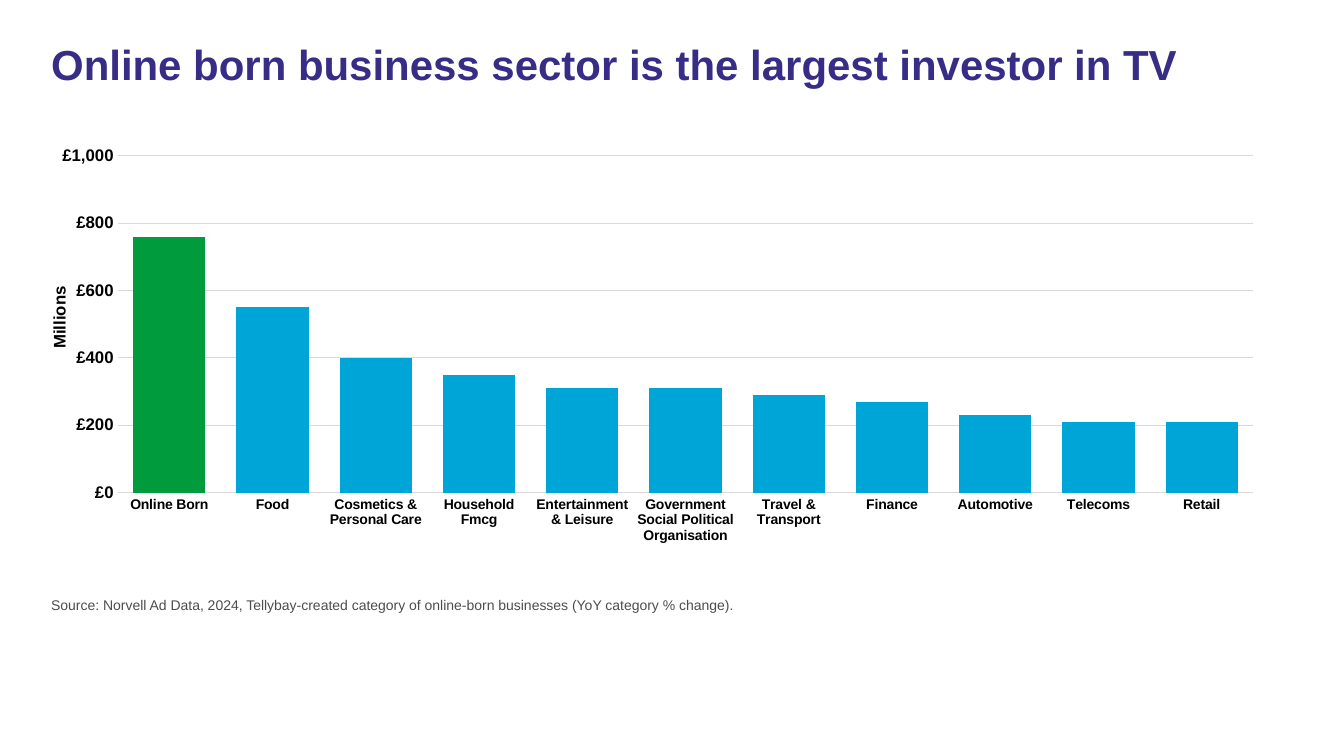
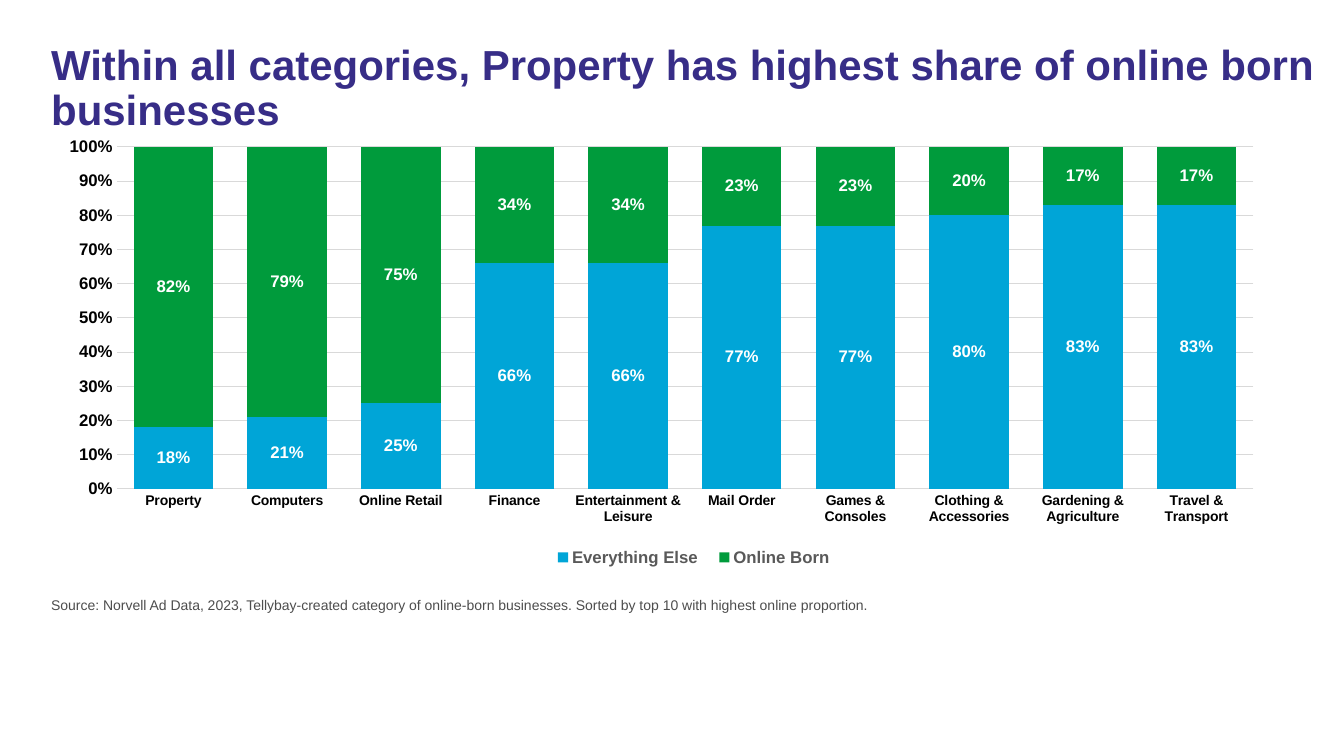
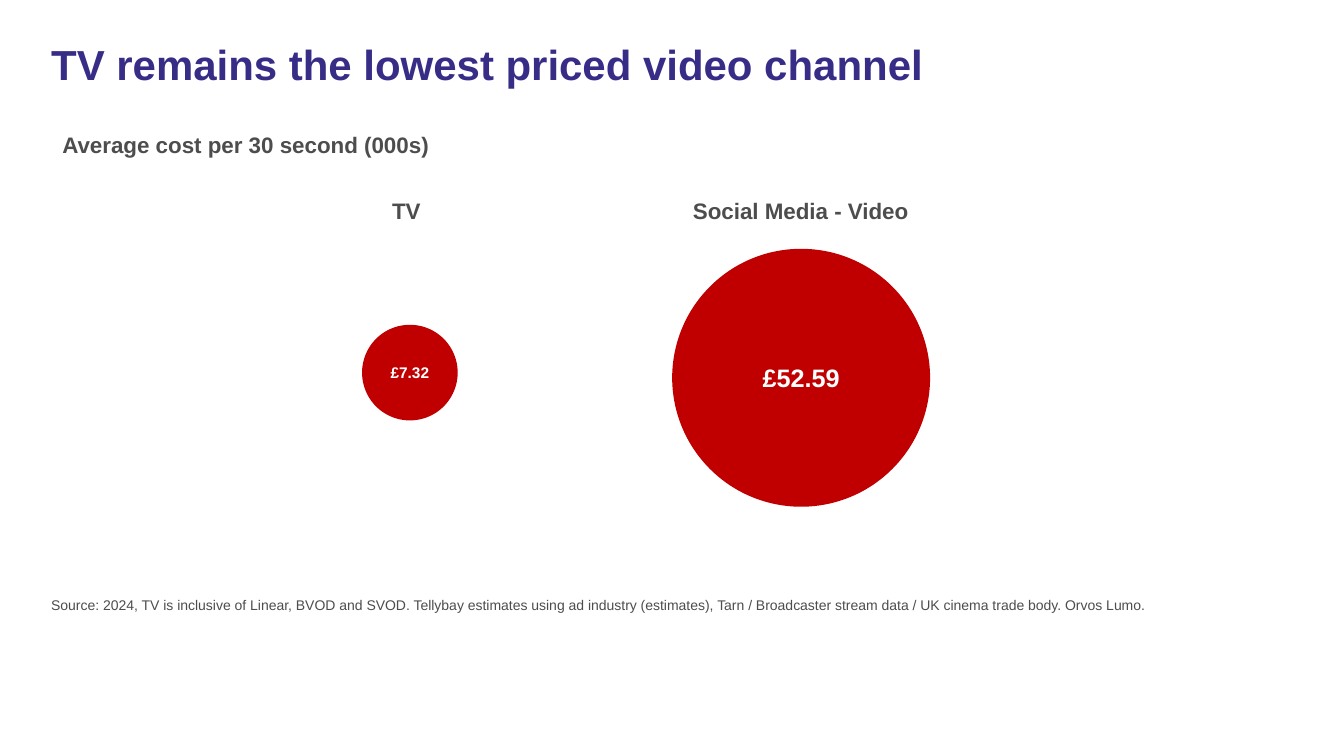
from lxml import etree
from pptx import Presentation
from pptx.chart.data import CategoryChartData
from pptx.dml.color import RGBColor
from pptx.enum.chart import XL_CHART_TYPE, XL_LABEL_POSITION, XL_LEGEND_POSITION, XL_TICK_MARK
from pptx.enum.shapes import MSO_SHAPE
from pptx.enum.text import MSO_ANCHOR, PP_ALIGN
from pptx.oxml.ns import qn
from pptx.util import Cm, Pt

FONT = "Arial"
PURPLE = RGBColor(0x37, 0x2D, 0x87)
BLUE = RGBColor(0x00, 0xA5, 0xD7)
GREEN = RGBColor(0x00, 0x9B, 0x3C)
RED = RGBColor(0xC0, 0x00, 0x00)
GREY = RGBColor(0x4D, 0x4D, 0x4D)
LEGEND_GREY = RGBColor(0x59, 0x59, 0x59)
GRID_GREY = RGBColor(0xD9, 0xD9, 0xD9)
BLACK = RGBColor(0x00, 0x00, 0x00)
WHITE = RGBColor(0xFF, 0xFF, 0xFF)

PLOT_AREA = {"x": 0.043, "y": 0.034, "w": 0.9, "h": 0.73}
LEGEND_AREA = {"x": 0.38, "y": 0.88, "w": 0.24, "h": 0.06}

INVESTORS = {
    "title": "Online born business sector is the largest investor in TV",
    "source": "Source: Norvell Ad Data, 2024, Tellybay-created category of "
              "online-born businesses (YoY category % change).",
    "unit": "Millions",
    "spend": [
        ("Online Born", 760),
        ("Food", 550),
        ("Cosmetics & Personal Care", 400),
        ("Household Fmcg", 350),
        ("Entertainment & Leisure", 310),
        ("Government Social Political Organisation", 310),
        ("Travel & Transport", 290),
        ("Finance", 270),
        ("Automotive", 230),
        ("Telecoms", 210),
        ("Retail", 210),
    ],
}
SHARES = {
    "title": "Within all categories, Property has highest share of online born businesses",
    "source": "Source: Norvell Ad Data, 2023, Tellybay-created category of "
              "online-born businesses. Sorted by top 10 with highest online proportion.",
    "online": [
        ("Property", 0.82),
        ("Computers", 0.79),
        ("Online Retail", 0.75),
        ("Finance", 0.34),
        ("Entertainment & Leisure", 0.34),
        ("Mail Order", 0.23),
        ("Games & Consoles", 0.23),
        ("Clothing & Accessories", 0.2),
        ("Gardening & Agriculture", 0.17),
        ("Travel & Transport", 0.17),
    ],
}
PRICES = {
    "title": "TV remains the lowest priced video channel",
    "source": "Source: 2024, TV is inclusive of Linear, BVOD and SVOD. Tellybay estimates "
              "using ad industry (estimates), Tarn / Broadcaster stream data / UK cinema "
              "trade body. Orvos Lumo.",
    "heading": "Average cost per 30 second (000s)",
    "channels": [
        {"name": "TV", "name_center": 10.24, "price": "£7.32", "size": 11,
         "center": (10.33, 9.39), "diameter": 2.41},
        {"name": "Social Media - Video", "name_center": 20.18, "price": "£52.59", "size": 18,
         "center": (20.19, 9.52), "diameter": 6.5},
    ],
}


def style_font(font, size, color, bold=True):
    font.name = FONT
    font.size = Pt(size)
    font.bold = bold
    font.color.rgb = color


def write(frame, text, size, color, bold=True, align=PP_ALIGN.LEFT):
    frame.word_wrap = True
    paragraph = frame.paragraphs[0]
    paragraph.alignment = align
    run = paragraph.add_run()
    run.text = text
    style_font(run.font, size, color, bold)
    return paragraph


def add_text(slide, box, *args, **kwargs):
    label = slide.shapes.add_textbox(*map(Cm, box))
    write(label.text_frame, *args, **kwargs)
    return label


def add_slide(deck, content, title_width=31.5):
    slide = deck.slides.add_slide(deck.slide_layouts[6])
    title = add_text(slide, (1.04, 0.99, title_width, 2.84), content["title"], 30, PURPLE)
    title.text_frame.paragraphs[0].line_spacing = 0.9
    add_text(slide, (1.04, 14.91, 31.5, 0.84), content["source"], 10, GREY, bold=False)
    return slide


def manual_layout(area, inner=False):
    layout = etree.Element(qn("c:layout"))
    manual = etree.SubElement(layout, qn("c:manualLayout"))
    settings = {"layoutTarget": "inner"} if inner else {}
    settings.update({"xMode": "edge", "yMode": "edge"}, **area)
    for tag, value in settings.items():
        etree.SubElement(manual, qn("c:" + tag)).set("val", str(value))
    return layout


def add_columns(slide, kind, top, height, categories, series, overlap, number_format, maximum, step):
    data = CategoryChartData()
    data.categories = categories
    for name, values, _ in series:
        data.add_series(name, values)
    chart = slide.shapes.add_chart(kind, Cm(1.57), Cm(top), Cm(31.83), Cm(height), data).chart
    chart.has_title = False
    chart.has_legend = False
    style_font(chart.font, 10, BLACK, bold=False)

    plot_area = chart.plots[0]._element.getparent()
    for old_layout in plot_area.findall(qn("c:layout")):
        plot_area.remove(old_layout)
    plot_area.insert(0, manual_layout(PLOT_AREA, inner=True))

    plot = chart.plots[0]
    plot.gap_width = 43
    plot.overlap = overlap
    plot.vary_by_categories = False
    for columns, (_, _, color) in zip(plot.series, series):
        columns.invert_if_negative = False
        columns.format.fill.solid()
        columns.format.fill.fore_color.rgb = color

    for axis, size in ((chart.category_axis, 10), (chart.value_axis, 12)):
        axis.major_tick_mark = axis.minor_tick_mark = XL_TICK_MARK.NONE
        style_font(axis.tick_labels.font, size, BLACK)
    scale = chart.value_axis
    scale.minimum_scale, scale.maximum_scale, scale.major_unit = 0, maximum, step
    scale.tick_labels.number_format = number_format
    scale.tick_labels.number_format_is_linked = False
    scale.format.line.fill.background()
    scale.has_major_gridlines = True
    for line in (chart.category_axis.format.line, scale.major_gridlines.format.line):
        line.color.rgb = GRID_GREY
        line.width = Pt(0.75)
    return chart


def build_investors(deck):
    slide = add_slide(deck, INVESTORS)
    sectors, spend = zip(*INVESTORS["spend"])
    chart = add_columns(slide, XL_CHART_TYPE.COLUMN_CLUSTERED, 3.53, 11.63, sectors,
                        [("Series 1", spend, BLUE)], -27, '"£"#,##0', 1000, 200)
    online_born = chart.plots[0].series[0].points[0].format.fill
    online_born.solid()
    online_born.fore_color.rgb = GREEN
    unit = add_text(slide, (0.05, 7.62, 2.87, 0.76), INVESTORS["unit"], 12, BLACK,
                    align=PP_ALIGN.CENTER)
    unit.rotation = 270


def build_shares(deck):
    slide = add_slide(deck, SHARES, title_width=32.84)
    sectors, online = zip(*SHARES["online"])
    rest = [round(1 - share, 2) for share in online]
    chart = add_columns(slide, XL_CHART_TYPE.COLUMN_STACKED_100, 3.3, 11.81, sectors,
                        [("Everything Else", rest, BLUE), ("Online Born", online, GREEN)],
                        100, "0%", 1, 0.1)
    for columns in chart.plots[0].series:
        labels = columns.data_labels
        labels.show_value = True
        labels.position = XL_LABEL_POSITION.CENTER
        labels.number_format = "0%"
        labels.number_format_is_linked = False
        style_font(labels.font, 12, WHITE)
    chart.has_legend = True
    legend = chart.legend
    legend.position = XL_LEGEND_POSITION.BOTTOM
    legend.include_in_layout = False
    style_font(legend.font, 12, LEGEND_GREY)
    for old_layout in legend._element.findall(qn("c:layout")):
        legend._element.remove(old_layout)
    legend._element.find(qn("c:legendPos")).addnext(manual_layout(LEGEND_AREA))


def build_prices(deck):
    slide = add_slide(deck, PRICES)
    add_text(slide, (1.32, 3.18, 12.04, 0.94), PRICES["heading"], 16, GREY)
    for channel in PRICES["channels"]:
        add_text(slide, (channel["name_center"] - 4, 4.85, 8, 0.94), channel["name"], 16, GREY,
                 align=PP_ALIGN.CENTER)
        diameter = channel["diameter"]
        left, top = (middle - diameter / 2 for middle in channel["center"])
        bubble = slide.shapes.add_shape(MSO_SHAPE.OVAL, Cm(left), Cm(top), Cm(diameter), Cm(diameter))
        bubble.shadow.inherit = False
        bubble.fill.solid()
        bubble.fill.fore_color.rgb = RED
        bubble.line.fill.background()
        bubble.text_frame.vertical_anchor = MSO_ANCHOR.MIDDLE
        write(bubble.text_frame, channel["price"], channel["size"], WHITE, align=PP_ALIGN.CENTER)


def main():
    deck = Presentation()
    deck.slide_width, deck.slide_height = Cm(33.87), Cm(19.05)
    build_investors(deck)
    build_shares(deck)
    build_prices(deck)
    deck.save("out.pptx")


if __name__ == "__main__":
    main()
